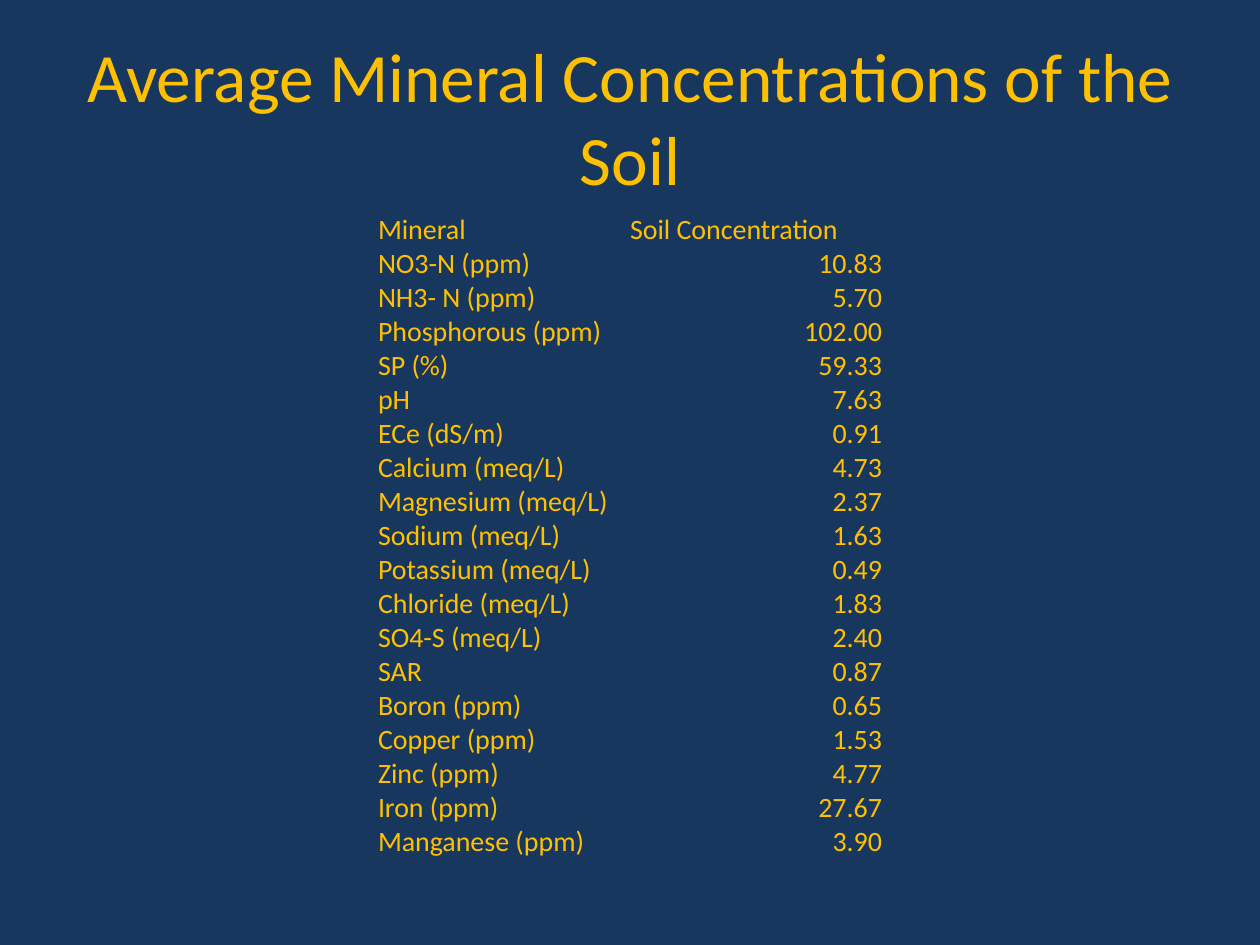
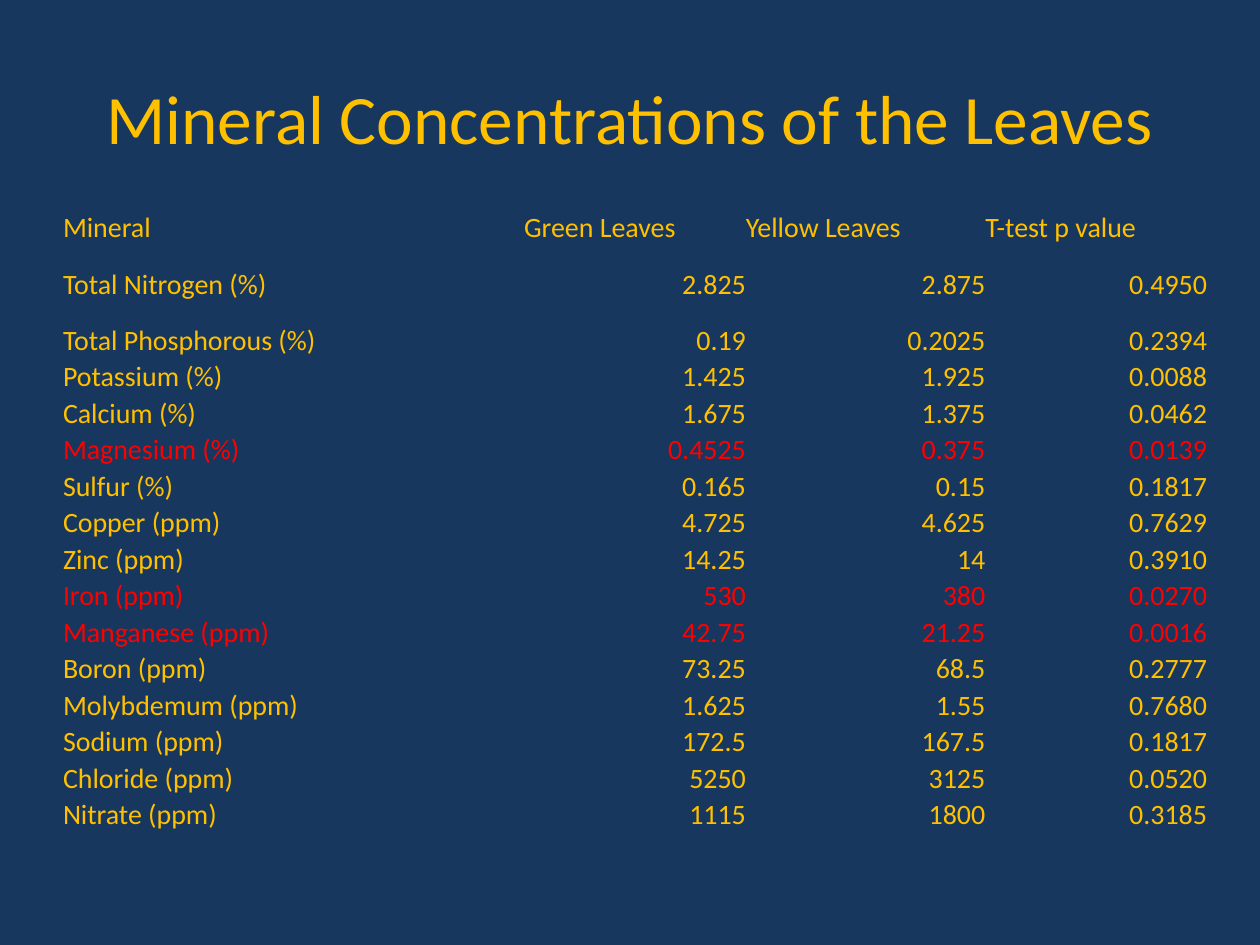
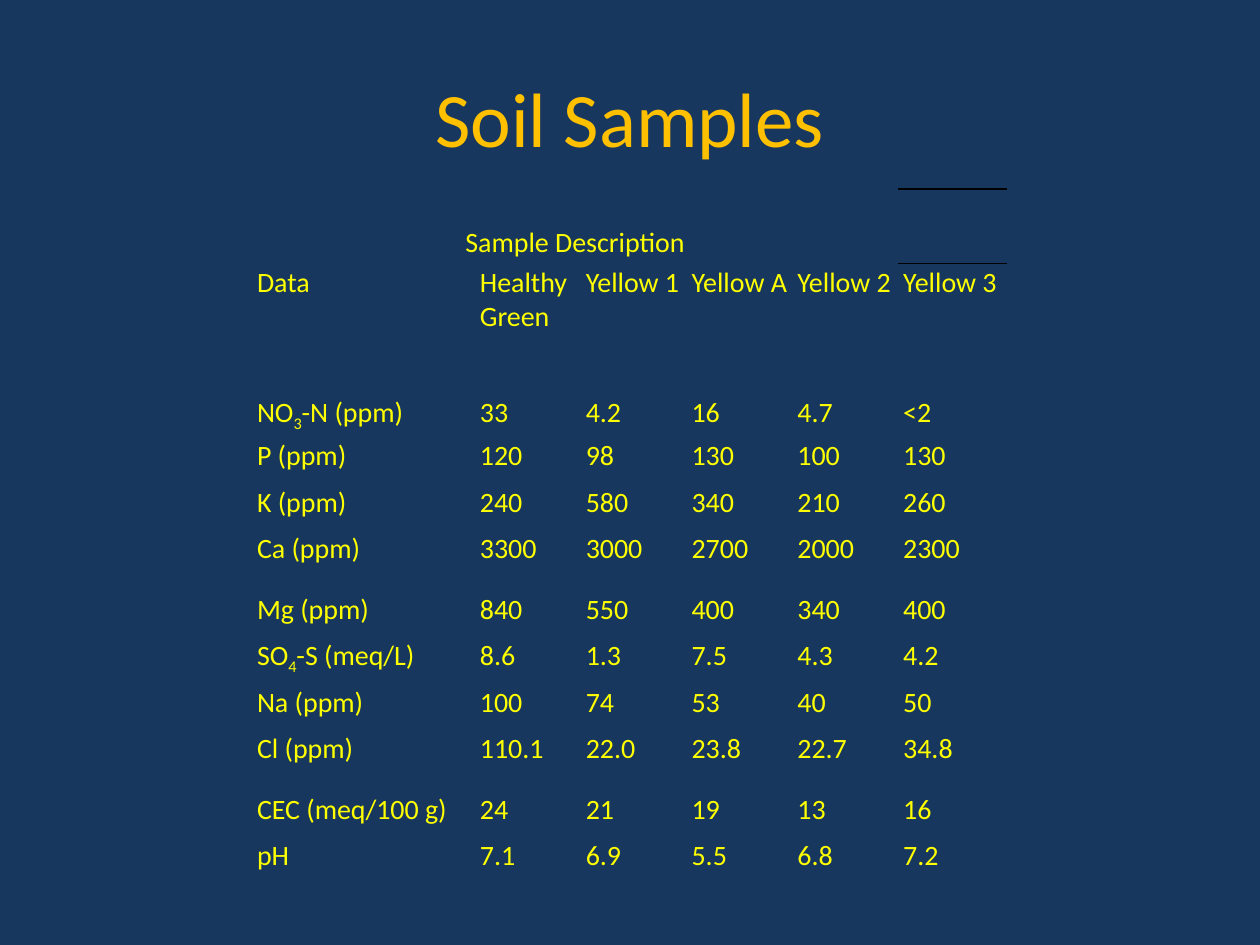
"""Build three slides of soil and leaf mineral tables."""
from lxml.etree import SubElement
from pptx import Presentation
from pptx.dml.color import RGBColor
from pptx.enum.text import MSO_ANCHOR as Anchor, PP_ALIGN as Align
from pptx.oxml import parse_xml
from pptx.oxml.ns import nsdecls, qn
from pptx.util import Inches, Pt

COLORS = {"navy": "17375E", "gold": "FFC000", "red": "FF0000",
          "yellow": "FFFF00", "black": "000000"}
FONT = "Calibri"
BODY_SIZE = 16
PLAIN_TABLE_STYLE = "{2D5ABB26-0587-4C30-8999-92F81FD0307C}"

SOIL_AVERAGES = [
    ("Mineral", "Soil Concentration"),
    ("NO3-N (ppm)", "10.83"),
    ("NH3- N (ppm)", "5.70"),
    ("Phosphorous (ppm)", "102.00"),
    ("SP (%)", "59.33"),
    ("pH", "7.63"),
    ("ECe (dS/m)", "0.91"),
    ("Calcium (meq/L)", "4.73"),
    ("Magnesium (meq/L)", "2.37"),
    ("Sodium (meq/L)", "1.63"),
    ("Potassium (meq/L)", "0.49"),
    ("Chloride (meq/L)", "1.83"),
    ("SO4-S (meq/L)", "2.40"),
    ("SAR", "0.87"),
    ("Boron (ppm)", "0.65"),
    ("Copper (ppm)", "1.53"),
    ("Zinc (ppm)", "4.77"),
    ("Iron (ppm)", "27.67"),
    ("Manganese (ppm)", "3.90"),
]
LEAF_MINERALS = [
    ("Mineral", "Green Leaves", "Yellow Leaves", "T-test p value"),
    ("Total Nitrogen (%)", "2.825", "2.875", "0.4950"),
    ("Total Phosphorous (%)", "0.19", "0.2025", "0.2394"),
    ("Potassium (%)", "1.425", "1.925", "0.0088"),
    ("Calcium (%)", "1.675", "1.375", "0.0462"),
    ("Magnesium (%)", "0.4525", "0.375", "0.0139"),
    ("Sulfur (%)", "0.165", "0.15", "0.1817"),
    ("Copper (ppm)", "4.725", "4.625", "0.7629"),
    ("Zinc (ppm)", "14.25", "14", "0.3910"),
    ("Iron (ppm)", "530", "380", "0.0270"),
    ("Manganese (ppm)", "42.75", "21.25", "0.0016"),
    ("Boron (ppm)", "73.25", "68.5", "0.2777"),
    ("Molybdemum (ppm)", "1.625", "1.55", "0.7680"),
    ("Sodium (ppm)", "172.5", "167.5", "0.1817"),
    ("Chloride (ppm)", "5250", "3125", "0.0520"),
    ("Nitrate (ppm)", "1115", "1800", "0.3185"),
]
RED_LEAF_MINERALS = {"Magnesium (%)", "Iron (ppm)", "Manganese (ppm)"}
SOIL_SAMPLES = [
    ("\vSample Description", "", "", "", "", ""),
    ("Data", "Healthy\nGreen", "Yellow 1", "Yellow A", "Yellow 2", "Yellow 3"),
    ("NO_3_-N (ppm)", "33", "4.2", "16", "4.7", "<2"),
    ("P (ppm)", "120", "98", "130", "100", "130"),
    ("K (ppm)", "240", "580", "340", "210", "260"),
    ("Ca (ppm)", "3300", "3000", "2700", "2000", "2300"),
    ("Mg (ppm)", "840", "550", "400", "340", "400"),
    ("SO_4_-S (meq/L)", "8.6", "1.3", "7.5", "4.3", "4.2"),
    ("Na (ppm)", "100", "74", "53", "40", "50"),
    ("Cl (ppm)", "110.1", "22.0", "23.8", "22.7", "34.8"),
    ("CEC (meq/100 g)", "24", "21", "19", "13", "16"),
    ("pH", "7.1", "6.9", "5.5", "6.8", "7.2"),
]


def add_run(paragraph, text, size, color):
    run = paragraph.add_run()
    run.text = text
    run.font.name = FONT
    run.font.size = Pt(size)
    run.font.color.rgb = RGBColor.from_string(COLORS[color])
    return run


def add_titled_slide(presentation, title, size=39.6):
    slide = presentation.slides.add_slide(presentation.slide_layouts[6])
    box = slide.shapes.add_textbox(Inches(0.5), Inches(0.3), Inches(9), Inches(1.25))
    frame = box.text_frame
    frame.word_wrap = True
    frame.vertical_anchor = Anchor.MIDDLE
    paragraph = frame.paragraphs[0]
    paragraph.alignment = Align.CENTER
    add_run(paragraph, title, size, "gold")
    return slide


def fill_cell(cell, text, color, alignment=Align.LEFT):
    """Write text: newline starts a paragraph, \\v breaks a line, underscores enclose a subscript."""
    for line_index, line in enumerate(text.split("\n")):
        frame = cell.text_frame
        paragraph = frame.add_paragraph() if line_index else frame.paragraphs[0]
        paragraph.alignment = alignment
        for piece_index, piece in enumerate(line.split("\v")):
            if piece_index:
                paragraph.add_line_break()
                SubElement(paragraph._p[-1], qn("a:rPr"), sz=str(BODY_SIZE * 100))
            for part_index, part in enumerate(piece.split("_")):
                if part:
                    run = add_run(paragraph, part, BODY_SIZE, color)
                    if part_index % 2:
                        run.font._element.set("baseline", "-25000")


def add_plain_table(slide, rows, left, top, widths, heights, margins=(0, 0)):
    table = slide.shapes.add_table(
        len(rows), len(widths), Inches(left), Inches(top),
        Inches(sum(widths)), Inches(sum(heights))).table
    table.first_row = table.horz_banding = False
    table._tbl.tblPr.find(qn("a:tableStyleId")).text = PLAIN_TABLE_STYLE
    for column, width in zip(table.columns, widths):
        column.width = Inches(width)
    for row, height in zip(table.rows, heights):
        row.height = Inches(height)
    for cell in table.iter_cells():
        cell.fill.background()
        cell.margin_left = cell.margin_right = Inches(margins[0])
        cell.margin_top = cell.margin_bottom = Inches(margins[1])
    return table


def fill_mineral_table(table, rows, red_names=()):
    for row_index, row in enumerate(rows):
        color = "red" if row[0] in red_names else "gold"
        for column_index, text in enumerate(row):
            cell = table.cell(row_index, column_index)
            cell.vertical_anchor = Anchor.BOTTOM if row_index else Anchor.TOP
            is_value = row_index and column_index
            fill_cell(cell, text, color, Align.RIGHT if is_value else Align.LEFT)


def fill_sample_table(table, rows):
    table.cell(0, 0).merge(table.cell(0, 4))
    for row_index, row in enumerate(rows):
        for column_index, text in enumerate(row):
            if text:
                fill_cell(table.cell(row_index, column_index), text, "yellow",
                          Align.LEFT if row_index else Align.CENTER)
    properties = table.cell(0, 5)._tc.get_or_add_tcPr()
    for position, side in enumerate(("lnT", "lnB")):
        properties.insert(position, parse_xml(
            f'<a:{side} {nsdecls("a")} w="9525"><a:solidFill>'
            f'<a:srgbClr val="{COLORS["black"]}"/></a:solidFill></a:{side}>'))


def main():
    presentation = Presentation()
    presentation.slide_width = Inches(10)
    presentation.slide_height = Inches(7.5)
    background = presentation.slide_master.background.fill
    background.solid()
    background.fore_color.rgb = RGBColor.from_string(COLORS["navy"])

    slide = add_titled_slide(presentation, "Average Mineral Concentrations of the Soil")
    table = add_plain_table(slide, SOIL_AVERAGES, 3, 1.69, [2, 2],
                            [0.27] * len(SOIL_AVERAGES))
    fill_mineral_table(table, SOIL_AVERAGES)

    slide = add_titled_slide(presentation, "Mineral Concentrations of the Leaves")
    heights = [0.44, 0.29, 0.44] + [0.29] * (len(LEAF_MINERALS) - 3)
    table = add_plain_table(slide, LEAF_MINERALS, 0.5, 1.67,
                            [3.66, 1.76, 1.9, 1.76], heights)
    fill_mineral_table(table, LEAF_MINERALS, RED_LEAF_MINERALS)

    slide = add_titled_slide(presentation, "Soil Samples", 44)
    heights = [0.59, 1.03, 0.26] + [0.37, 0.37, 0.48, 0.37] * 2 + [0.26]
    heights = heights[:6] + [0.37] * 3 + [0.48, 0.37, 0.26]
    table = add_plain_table(slide, SOIL_SAMPLES, 2, 1.5,
                            [1.77] + [0.84] * 4 + [0.86], heights, (0.04, 0.02))
    fill_sample_table(table, SOIL_SAMPLES)

    presentation.save("out.pptx")


if __name__ == "__main__":
    main()
